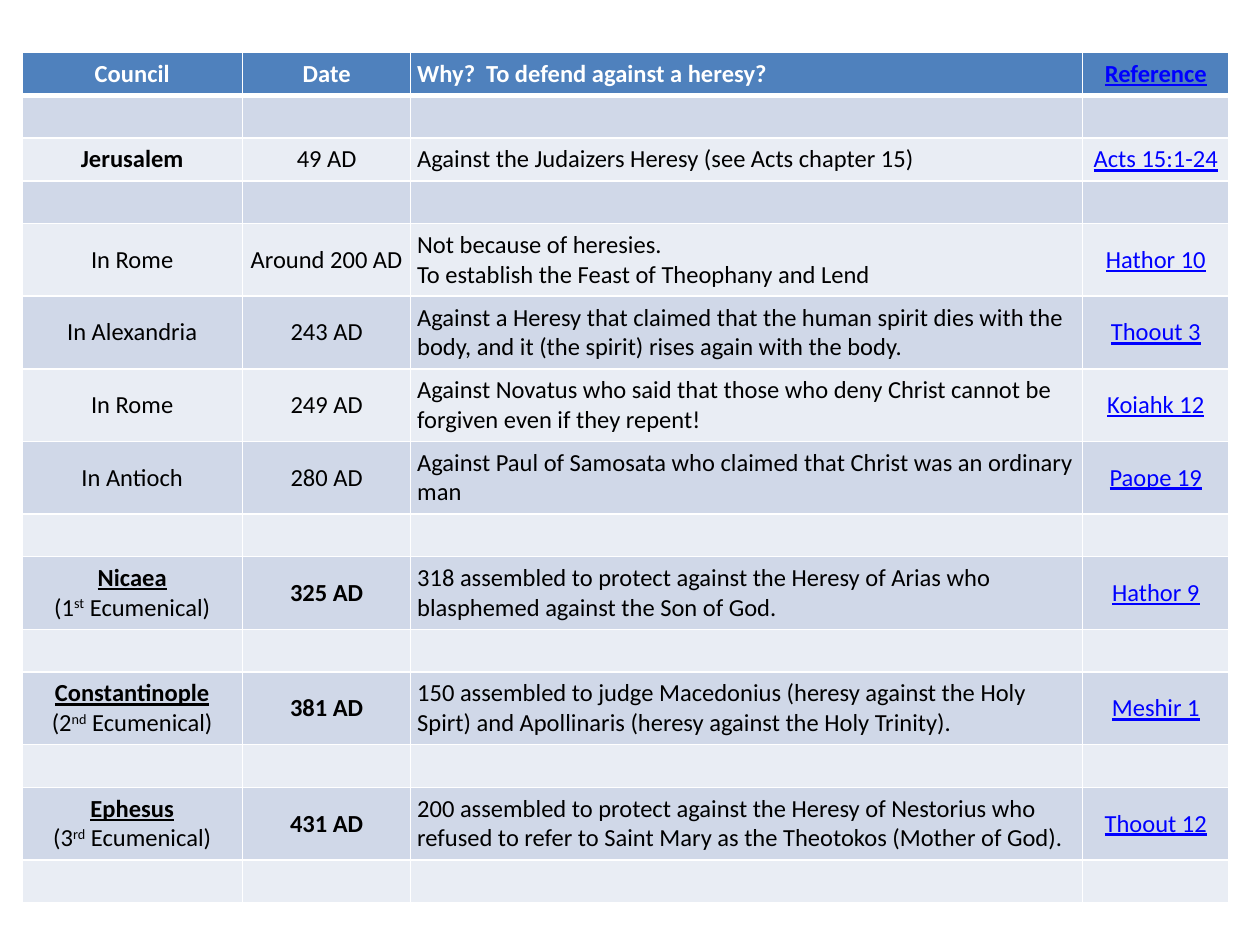
import pptx
import pptx.dml.color
import pptx.enum.text
import pptx.oxml.ns
import pptx.util
from dataclasses import dataclass
from lxml import etree

Cm, Pt = pptx.util.Cm, pptx.util.Pt
qn = pptx.oxml.ns.qn
ALIGN = pptx.enum.text.PP_ALIGN
MIDDLE = pptx.enum.text.MSO_ANCHOR.MIDDLE


@dataclass(frozen=True)
class Theme:
    font: str = "Calibri"
    size: int = 14
    text: str = "000000"
    white: str = "FFFFFF"
    link: str = "0000FF"
    header: str = "4F81BD"
    bands: tuple = ("E9EDF4", "D0D8E8")
    raised: int = 30000


theme = Theme()


def add_text(p, text, color=theme.text, bold=False, underline=False, raised=False):
    r = p.add_run()
    r.text = text
    r.font.name = theme.font
    r.font.size = Pt(theme.size)
    r.font.bold = bold
    r.font.underline = underline
    r.font.color.rgb = pptx.dml.color.RGBColor.from_string(color)
    if raised:
        r.font._element.set("baseline", str(theme.raised))


def add_border(cell, side, width):
    ln = etree.SubElement(cell._tc.get_or_add_tcPr(), qn(f"a:{side}"), w=str(Pt(width)))
    fill = etree.SubElement(ln, qn("a:solidFill"))
    etree.SubElement(fill, qn("a:srgbClr"), val=theme.white)


# Content: an empty tuple is a spacer row; an ecumenical council carries
# its name, number and ordinal ending
headings = ("Council", "Date", "Why?  To defend against a heresy?", "Reference")
councils = [
    (),
    ("Jerusalem", "49 AD", "Against the Judaizers Heresy (see Acts chapter 15)", "Acts 15:1-24"),
    (),
    ("In Rome", "Around 200 AD",
     "Not because of heresies.\nTo establish the Feast of Theophany and Lend", "Hathor 10"),
    ("In Alexandria", "243 AD",
     "Against a Heresy that claimed that the human spirit dies with the body, "
     "and it (the spirit) rises again with the body.", "Thoout 3"),
    ("In Rome", "249 AD",
     "Against Novatus who said that those who deny Christ cannot be "
     "forgiven even if they repent!", "Koiahk 12"),
    ("In Antioch", "280 AD",
     "Against Paul of Samosata who claimed that Christ was an ordinary man", "Paope 19"),
    (),
    (("Nicaea", "1", "st"), "325 AD",
     "318 assembled to protect against the Heresy of Arias who "
     "blasphemed against the Son of God.", "Hathor 9"),
    (),
    (("Constantinople", "2", "nd"), "381 AD",
     "150 assembled to judge Macedonius (heresy against the Holy Spirt) "
     "and Apollinaris (heresy against the Holy Trinity).", "Meshir 1"),
    (),
    (("Ephesus", "3", "rd"), "431 AD",
     "200 assembled to protect against the Heresy of Nestorius who refused "
     "to refer to Saint Mary as the Theotokos (Mother of God).", "Thoout 12"),
    (),
]
rows = [headings] + councils
col_widths = [4.45, 3.39, 13.54, 2.96]
row_height = 0.86

# Slide
prs = pptx.Presentation()
prs.slide_width, prs.slide_height = Cm(25.4), Cm(19.05)
s = prs.slides.add_slide(prs.slide_layouts[6])

# Table grid
frame = s.shapes.add_table(len(rows), len(col_widths), Cm(0.44), Cm(1.06),
                           Cm(sum(col_widths)), Cm(row_height * len(rows)))
table = frame.table
for column, width in zip(table.columns, col_widths):
    column.width = Cm(width)
for row in table.rows:
    row.height = Cm(row_height)

# Cells
for i, values in enumerate(rows):
    is_header = i == 0
    ecumenical = bool(values) and isinstance(values[0], tuple)
    for j, cell in enumerate(table.rows[i].cells):
        cell.margin_left = cell.margin_right = Cm(0.13)
        cell.margin_top = cell.margin_bottom = Cm(0.13)
        cell.vertical_anchor = MIDDLE
        for side in ("lnL", "lnR", "lnT", "lnB"):
            heavy = (is_header and side == "lnB") or (i == 1 and side == "lnT")
            add_border(cell, side, 3 if heavy else 1)
        cell.fill.solid()
        cell.fill.fore_color.rgb = pptx.dml.color.RGBColor.from_string(
            theme.header if is_header else theme.bands[i % 2])

        tf = cell.text_frame
        p = tf.paragraphs[0]
        if not values:
            # Keep spacer rows as low as a line of text
            etree.SubElement(p._p, qn("a:endParaRPr"), sz=str(theme.size * 100))
        elif j == 0 and ecumenical:
            name, number, ending = values[0]
            p.alignment = ALIGN.CENTER
            add_text(p, name, bold=True, underline=True)
            p.add_line_break()
            add_text(p, f"({number}")
            add_text(p, ending, raised=True)
            add_text(p, " Ecumenical)")
        else:
            is_link = j == 3
            color = theme.link if is_link else theme.white if is_header else theme.text
            bold = is_header or values[j] == "Jerusalem" or (j == 1 and ecumenical)
            for n, line in enumerate(values[j].split("\n")):
                p = tf.add_paragraph() if n else p
                p.alignment = ALIGN.LEFT if j == 2 else ALIGN.CENTER
                add_text(p, line, color=color, bold=bold, underline=is_link)

prs.save("out.pptx")
